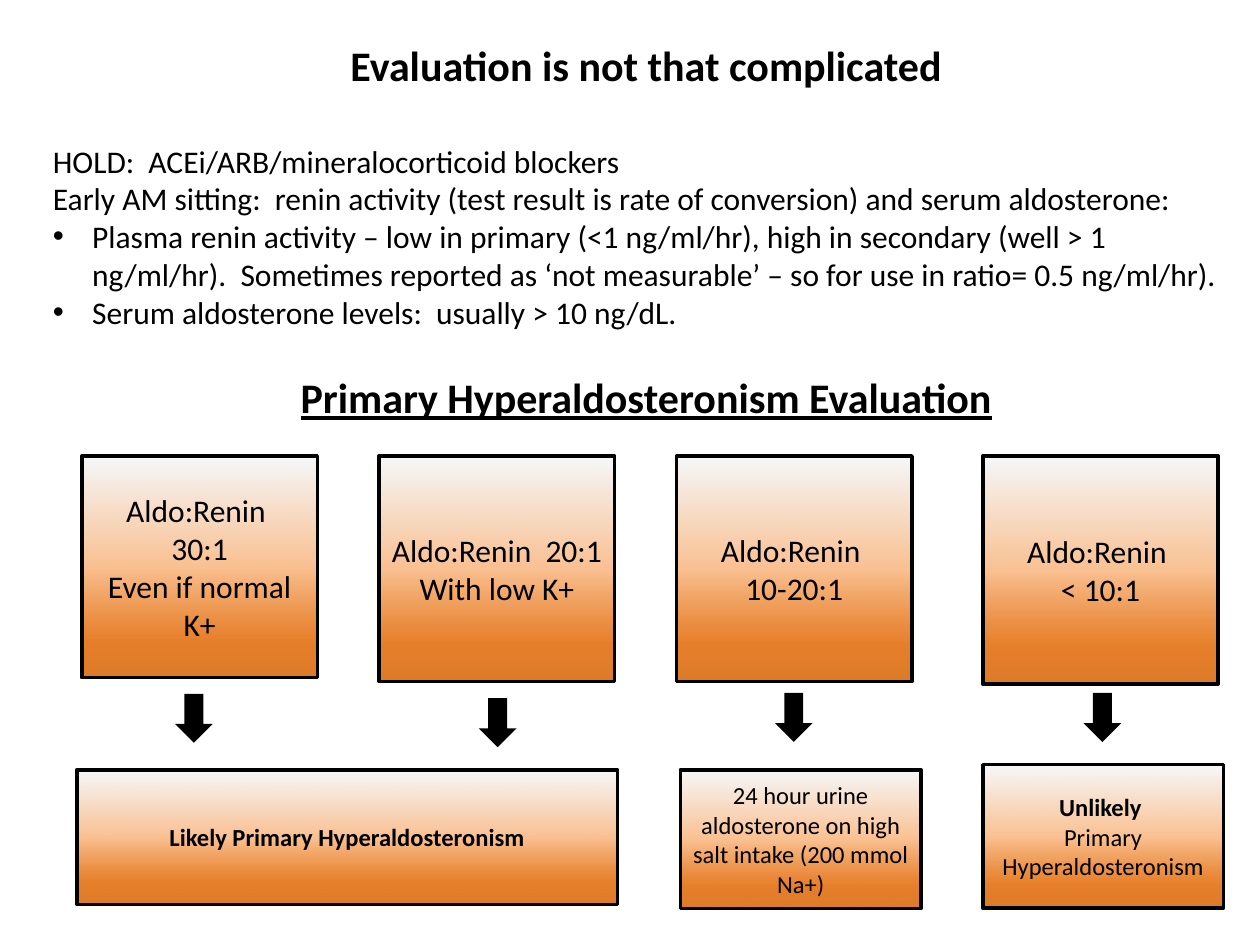
"""Build a slide on how to evaluate primary hyperaldosteronism."""
from lxml.etree import SubElement as Sub
from pptx import Presentation
from pptx.dml.color import RGBColor as Rgb
from pptx.enum.shapes import MSO_SHAPE as Kind
from pptx.enum.text import MSO_ANCHOR as Anchor, MSO_AUTO_SIZE as Fit, PP_ALIGN as Align
from pptx.oxml.ns import qn
from pptx.util import Pt

INK = {"text": "000000", "pale": "F6F9FC", "peach": "FAC090",
       "orange": "E46C0A", "rust": "D86709"}
STOPS = [(0, "pale", 100), (51, "peach", 100), (83, "orange", 86), (100, "rust", 86)]


def put(par, text, size=18, bold=False, line=False, align=Align.CENTER):
    par.alignment = align
    par.space_before = Pt(0)
    run = par.add_run()
    run.text = text
    font = run.font
    font.name, font.size, font.bold, font.underline = "Calibri", Pt(size), bold, line
    font.color.rgb = Rgb.from_string(INK["text"])


def mark(par, char=None, step=0):
    props = par._p.get_or_add_pPr()
    props.set("marL", str(Pt(step)))
    props.set("indent", str(-Pt(step)))
    if char:
        Sub(props, qn("a:buFont"), typeface="Arial")
        Sub(props, qn("a:buChar"), char=char)
    else:
        Sub(props, qn("a:buNone"))


class Deck:
    def __init__(self, wide, high):
        self.show = Presentation()
        self.show.slide_width, self.show.slide_height = Pt(wide), Pt(high)
        self.slide = self.show.slides.add_slide(self.show.slide_layouts[1])
        self.shapes = self.slide.shapes

    def frame(self, shape, spot):
        shape.left, shape.top, shape.width, shape.height = map(Pt, spot)
        text = shape.text_frame
        text.word_wrap = True
        text.auto_size = Fit.NONE
        text.vertical_anchor = Anchor.TOP
        return text

    def title(self, text, spot):
        put(self.frame(self.shapes.title, spot).paragraphs[0], text, size=24, bold=True)

    def body(self, items, spot):
        text = self.frame(self.slide.placeholders[1], spot)
        for i, (char, words) in enumerate(items):
            par = text.add_paragraph() if i else text.paragraphs[0]
            mark(par, char, 22.5 if char else 0)
            put(par, words, align=Align.LEFT)

    def head(self, text, spot):
        box = self.shapes.add_textbox(*map(Pt, spot))
        put(self.frame(box, spot).paragraphs[0], text, size=24, bold=True, line=True)

    def card(self, lines, spot, size=18, bold=False):
        box = self.shapes.add_shape(Kind.RECTANGLE, *map(Pt, spot))
        box.shadow.inherit = False
        box.line.color.rgb = Rgb.from_string(INK["text"])
        box.line.width = Pt(2)
        self.shade(box)
        text = self.frame(box, spot)
        text.vertical_anchor = Anchor.MIDDLE
        for i, words in enumerate(lines):
            par = text.add_paragraph() if i else text.paragraphs[0]
            put(par, words, size=size, bold=bold and i == 0)

    def shade(self, box):
        box.fill.gradient()
        box.fill.gradient_angle = 270
        stops = box.element.spPr.find(qn("a:gradFill")).find(qn("a:gsLst"))
        for old in list(stops):
            stops.remove(old)
        for pos, name, alpha in STOPS:
            stop = Sub(stops, qn("a:gs"), pos=str(pos * 1000))
            tint = Sub(stop, qn("a:srgbClr"), val=INK[name])
            if alpha < 100:
                Sub(tint, qn("a:alpha"), val=str(alpha * 1000))

    def arrow(self, left, top):
        tip = self.shapes.add_shape(Kind.DOWN_ARROW, Pt(left), Pt(top), Pt(21.6), Pt(28))
        tip.shadow.inherit = False
        tip.fill.solid()
        tip.fill.fore_color.rgb = Rgb.from_string(INK["text"])
        tip.line.fill.background()


def main():
    deck = Deck(720, 540)
    deck.title("Evaluation is not that complicated", (23, 18.7, 692.6, 40))
    deck.body([
        (None, "HOLD:  ACEi/ARB/mineralocorticoid blockers"),
        (None, "Early AM sitting:  renin activity (test result is rate of conversion) "
               "and serum aldosterone:"),
        ("•", "Plasma renin activity – low in primary (<1 ng/ml/hr), high in secondary "
              "(well > 1 ng/ml/hr).  Sometimes reported as ‘not measurable’ – so for use "
              "in ratio= 0.5 ng/ml/hr)."),
        ("•", "Serum aldosterone levels:  usually > 10 ng/dL."),
    ], (23, 77.3, 692.6, 118))
    deck.head("Primary Hyperaldosteronism Evaluation", (23, 209, 692.6, 38))

    ratios = [
        (46.8, 126.7, ["Aldo:Renin ", "30:1", "Even if normal K+"]),
        (216.7, 128.9, ["Aldo:Renin  20:1", "With low K+"]),
        (386.6, 128.9, ["Aldo:Renin ", "10-20:1"]),
        (561.6, 130.3, ["Aldo:Renin ", "< 10:1"]),
    ]
    for left, high, lines in ratios:
        deck.card(lines, (left, 260.6, 134.6, high))

    results = [
        (["Likely Primary Hyperaldosteronism"], (43.9, 439.9, 308.9, 77), True),
        (["24 hour urine aldosterone on high salt intake (200 mmol Na+)"],
         (388.8, 439.9, 137.5, 79.2), False),
        (["Unlikely ", "Primary", "Hyperaldosteronism"], (561.6, 437, 137.5, 82), True),
    ]
    for lines, spot, bold in results:
        deck.card(lines, spot, size=14, bold=bold)

    for left, top in [(100, 396.5), (273.6, 399), (442.8, 396), (619.2, 396)]:
        deck.arrow(left, top)
    deck.show.save("out.pptx")


if __name__ == "__main__":
    main()
